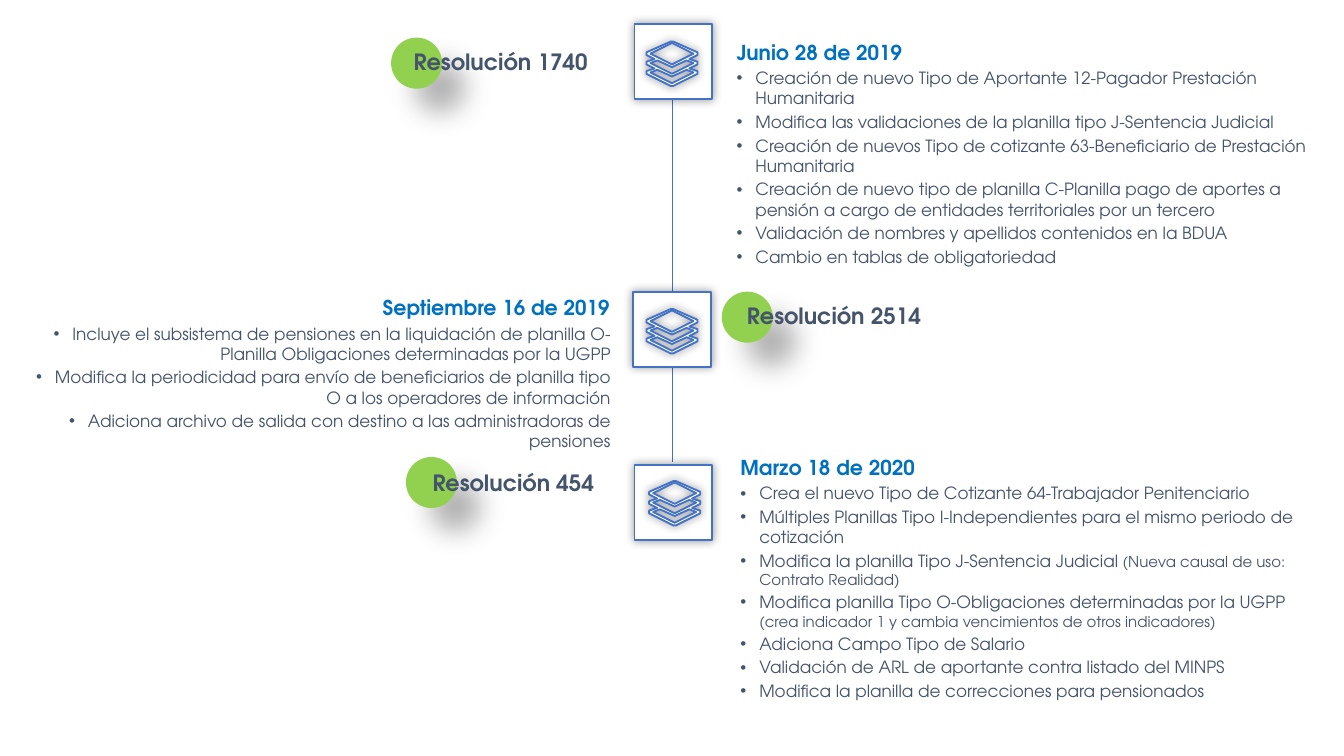
"""Build a timeline slide of three resolutions with their dates and changes."""
from lxml.etree import SubElement
from pptx import Presentation
from pptx.dml.color import RGBColor
from pptx.enum.shapes import MSO_CONNECTOR, MSO_SHAPE
from pptx.enum.text import MSO_ANCHOR, MSO_AUTO_SIZE, PP_ALIGN
from pptx.oxml.ns import qn
from pptx.util import Inches, Pt

FONT = "TeX Gyre Adventor"
BLUE, GREEN, WHITE, BLACK = "4472C4", "92D050", "FFFFFF", "000000"
HEADING = {"name": FONT, "size": Pt(11), "bold": True, "color": "0070C0"}
BODY = {"name": FONT, "size": Pt(9), "bold": False, "color": "44546A"}
NOTE = {**BODY, "size": Pt(8)}
LABEL = {**BODY, "size": Pt(12), "bold": True}
SQUARE_SHADOW = {"alpha": 40, "blur": 5, "distance": 0, "angle": 0}
DOT_SHADOW = {"alpha": 30, "blur": 15, "distance": 18, "angle": 45}


def add_shadow(shape, alpha, blur, distance, angle):
    shape.shadow.inherit = False
    effects = shape._element.spPr.find(qn("a:effectLst"))
    shadow = SubElement(effects, qn("a:outerShdw"), blurRad=str(Pt(blur)), dist=str(Pt(distance)),
                        dir=str(angle * 60000), algn="ctr", rotWithShape="0")
    shadow_color = SubElement(shadow, qn("a:srgbClr"), val=BLACK)
    SubElement(shadow_color, qn("a:alpha"), val=str(alpha * 1000))


def add_text(paragraph, text, style):
    run = paragraph.add_run()
    run.text = text
    for name, value in style.items():
        if name == "color":
            run.font.color.rgb = RGBColor.from_string(value)
        else:
            setattr(run.font, name, value)


presentation = Presentation()
presentation.slide_width = Inches(10)
presentation.slide_height = Inches(10) * 9 // 16
slide = presentation.slides.add_slide(presentation.slide_layouts[6])
shapes = slide.shapes

for top, bottom in [(0.74, 2.35), (2.73, 3.44)]:
    connector = shapes.add_connector(
        MSO_CONNECTOR.STRAIGHT, Inches(5), Inches(top), Inches(5), Inches(bottom))
    connector.line.color.rgb = RGBColor.from_string(BLUE)
    connector.line.width = Pt(0.5)
    SubElement(connector._element.spPr, qn("a:effectLst"))

right_edge = [(20, 0), (38, 8), (38, 10), (32, 13), (38, 15), (38, 17),
              (32, 20), (38, 22), (38, 24), (20, 33)]
outline = right_edge + [(38 - x, y) for x, y in reversed(right_edge)]
top_sheet = [(3, 9), (19, 1), (35, 9), (19, 17)]
lower_sheet = [(19, 24), (3, 16), (8, 14), (19, 19), (30, 14), (35, 16)]
bottom_sheet = [(x, y + 7) for x, y in lower_sheet]

squares = [(4.73, 0.17, 4.81, 0.31), (4.72, 2.16, 4.81, 2.3), (4.73, 3.45, 4.83, 3.58)]
for left, top, icon_left, icon_top in squares:
    square = shapes.add_shape(
        MSO_SHAPE.RECTANGLE, Inches(left), Inches(top), Inches(0.56), Inches(0.58))
    square.rotation = 90
    builder = shapes.build_freeform(*outline[0], scale=Inches(0.01))
    builder.add_line_segments(outline[1:])
    for sheet in (lower_sheet, bottom_sheet, top_sheet):
        builder.move_to(*sheet[0])
        builder.add_line_segments(sheet[1:])
    icon = builder.convert_to_shape(Inches(icon_left), Inches(icon_top))
    for shape in (square, icon):
        shape.fill.solid()
        shape.fill.fore_color.rgb = RGBColor.from_string(WHITE)
        shape.line.color.rgb = RGBColor.from_string(BLUE)
        shape.line.width = Pt(1)
        add_shadow(shape, **SQUARE_SHADOW)

resolutions = [
    ("Resolución 1740", 2.91, 0.28, 2.98, 0.31, 1.77),
    ("Resolución 2514", 5.37, 2.17, 5.46, 2.2, 1.9),
    ("Resolución 454", 3.02, 3.4, 3.12, 3.44, 1.9),
]
for text, dot_left, dot_top, left, top, width in resolutions:
    dot = shapes.add_shape(
        MSO_SHAPE.OVAL, Inches(dot_left), Inches(dot_top), Inches(0.38), Inches(0.38))
    dot.fill.solid()
    dot.fill.fore_color.rgb = RGBColor.from_string(GREEN)
    dot.line.fill.background()
    add_shadow(dot, **DOT_SHADOW)
    label = shapes.add_textbox(Inches(left), Inches(top), Inches(width), Inches(0.3))
    frame_format = {"word_wrap": True, "vertical_anchor": MSO_ANCHOR.MIDDLE,
                    "auto_size": MSO_AUTO_SIZE.SHAPE_TO_FIT_TEXT}
    for name, value in frame_format.items():
        setattr(label.text_frame, name, value)
    add_text(label.text_frame.paragraphs[0], text, LABEL)

details = [
    ("Junio 28 de 2019", (5.3, 0.17, 4.62, 1.95), PP_ALIGN.LEFT, [
        ("Creación de nuevo Tipo de Aportante 12-Pagador Prestación Humanitaria",),
        ("Modifica las validaciones de la planilla tipo J-Sentencia Judicial",),
        ("Creación de nuevos Tipo de cotizante 63-Beneficiario de Prestación Humanitaria",),
        ("Creación de nuevo tipo de planilla C-Planilla pago de aportes a pensión a cargo "
         "de entidades territoriales por un tercero",),
        ("Validación de nombres y apellidos contenidos en la BDUA",),
        ("Cambio en tablas de obligatoriedad",),
    ]),
    ("Septiembre 16 de 2019", (-0.01, 2.07, 4.73, 1.4), PP_ALIGN.RIGHT, [
        ("Incluye el subsistema de pensiones en la liquidación de planilla O-Planilla "
         "Obligaciones determinadas por la UGPP",),
        ("Modifica la periodicidad para envío de beneficiarios de planilla tipo O a los "
         "operadores de información",),
        ("Adiciona archivo de salida con destino a las administradoras de pensiones",),
    ]),
    ("Marzo 18 de 2020", (5.33, 3.26, 4.73, 2.1), PP_ALIGN.LEFT, [
        ("Crea el nuevo Tipo de Cotizante 64-Trabajador Penitenciario",),
        ("Múltiples Planillas Tipo I-Independientes para el mismo periodo de cotización",),
        ("Modifica la planilla Tipo J-Sentencia Judicial ",
         "(Nueva causal de uso: Contrato Realidad)"),
        ("Modifica planilla Tipo O-Obligaciones determinadas por la UGPP ",
         "(crea indicador 1 y cambia vencimientos de otros indicadores)"),
        ("Adiciona Campo Tipo de Salario",),
        ("Validación de ARL de aportante contra listado del MINPS",),
        ("Modifica la planilla de correcciones para pensionados",),
    ]),
]
for date, position, alignment, changes in details:
    box = shapes.add_textbox(*[Inches(length) for length in position])
    frame_format = {"word_wrap": True, "auto_size": MSO_AUTO_SIZE.SHAPE_TO_FIT_TEXT,
                    "margin_left": Inches(0.18), "margin_right": Inches(0.18),
                    "margin_top": Inches(0.09), "margin_bottom": Inches(0.09)}
    for name, value in frame_format.items():
        setattr(box.text_frame, name, value)
    heading = box.text_frame.paragraphs[0]
    heading.alignment = alignment
    heading.line_spacing = 1.2
    add_text(heading, date, HEADING)
    for change in changes:
        paragraph = box.text_frame.add_paragraph()
        properties = paragraph._p.get_or_add_pPr()
        properties.set("marL", str(Inches(0.14)))
        properties.set("indent", str(-Inches(0.14)))
        SubElement(properties, qn("a:buFont"), typeface="Arial")
        SubElement(properties, qn("a:buChar"), char="•")
        paragraph.alignment = alignment
        paragraph.space_before = Pt(1.8)
        for text, style in zip(change, (BODY, NOTE)):
            add_text(paragraph, text, style)

presentation.save("out.pptx")
